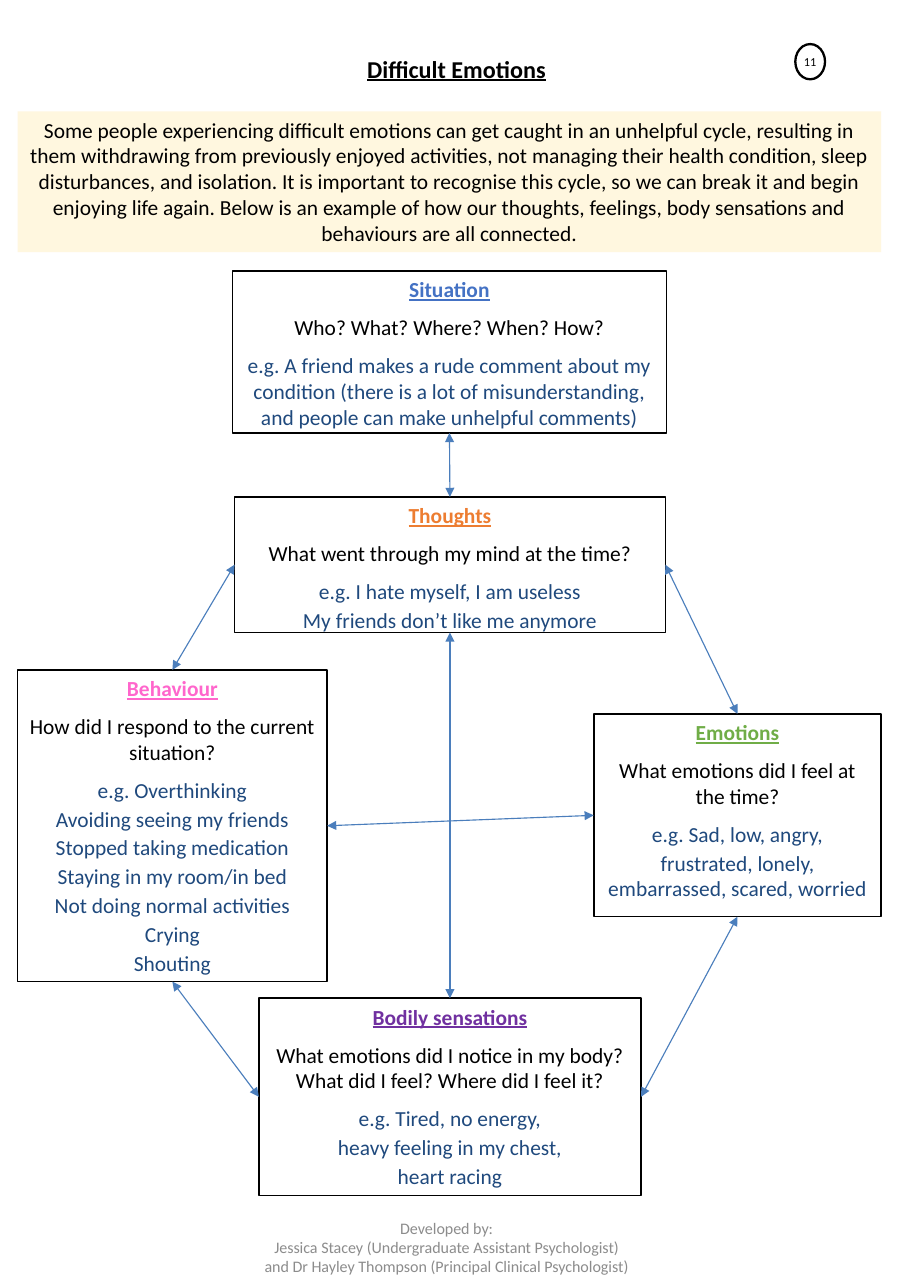
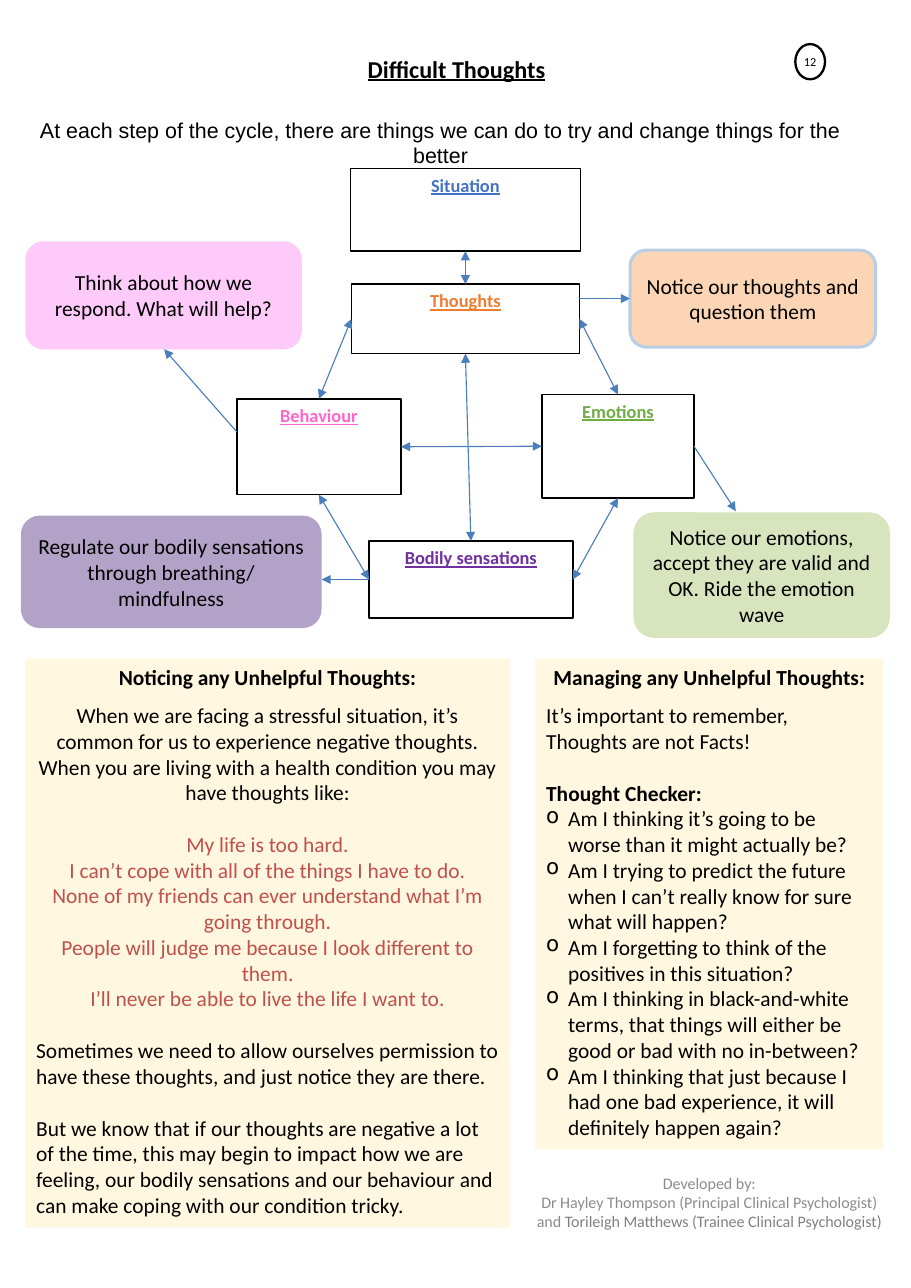
"""Two worksheets on the cycle of difficult emotions and thoughts."""
import dataclasses

import pptx
import pptx.dml.color
import pptx.enum.shapes
import pptx.enum.text
import pptx.oxml.ns
import pptx.util
from lxml import etree

Pt = pptx.util.Pt
Shape = pptx.enum.shapes.MSO_SHAPE
Align = pptx.enum.text.PP_ALIGN
Anchor = pptx.enum.text.MSO_ANCHOR
qn = pptx.oxml.ns.qn
CELL = pptx.util.Inches(0.1)
COLS, ROWS = 82.7, 116.9
TOP, LEFT, BOTTOM, RIGHT = range(4)


@dataclasses.dataclass(frozen=True)
class Theme:
    """Colours and type sizes of both slides."""
    font: str = "Calibri"
    ink: str = "000000"
    paper: str = "FFFFFF"
    cream: str = "FFF2CC"
    clear: int = 61000
    arrow: str = "4B7EBC"
    navy: str = "1F497D"
    red: str = "C0504D"
    grey: str = "8C8C8C"
    dim: str = "808080"
    title: float = 15.8
    body: float = 14
    label: float = 12
    credit: float = 10.5
    page: float = 8
    line: float = 17


T = Theme()
HUES = {"Situation": "4472C4", "Thoughts": "ED7D31", "Behaviour": "FF66CC",
        "Emotions": "70AD47", "Bodily sensations": "7030A0"}
LINKS = [("Situation", BOTTOM, "Thoughts", TOP),
         ("Thoughts", RIGHT, "Emotions", TOP),
         ("Behaviour", BOTTOM, "Bodily sensations", LEFT),
         ("Bodily sensations", RIGHT, "Emotions", BOTTOM),
         ("Behaviour", RIGHT, "Emotions", LEFT),
         ("Thoughts", BOTTOM, "Bodily sensations", TOP),
         ("Behaviour", TOP, "Thoughts", LEFT)]


@dataclasses.dataclass
class Para:
    """One paragraph and its look."""
    text: str
    color: str = T.ink
    size: float = T.body
    bold: bool = False
    under: bool = False
    after: float = 0
    before: float = 0
    left: bool = False
    bullet: bool = False
    font: str = T.font


def rgb(code):
    """Turn a hex code into a colour."""
    return pptx.dml.color.RGBColor.from_string(code)


def grid(*cells):
    """Turn grid cells into lengths."""
    return [round(cell * CELL) for cell in cells]


def write(shape, paras, anchor=Anchor.TOP, wrap=True):
    """Fill a shape with paragraphs."""
    frame = shape.text_frame
    frame.word_wrap = wrap
    frame.vertical_anchor = anchor
    for i, item in enumerate(paras):
        para = frame.add_paragraph() if i else frame.paragraphs[0]
        para.text = item.text
        para.alignment = Align.LEFT if item.left else Align.CENTER
        para.space_before, para.space_after = Pt(item.before), Pt(item.after)
        if item.bullet:
            props = para._p.get_or_add_pPr()
            props.set("marL", str(2 * CELL))
            props.set("indent", str(-2 * CELL))
            etree.SubElement(props, qn("a:buChar"), char="o")
        font = para.font
        font.name, font.size, font.bold = item.font, Pt(item.size), item.bold
        font.underline = item.under
        font.color.rgb = rgb(item.color)
    return frame


def block(slide, kind, box, fill=None, line=None, width=1):
    """Draw a flat shape in a box of grid cells."""
    shape = slide.shapes.add_shape(kind, *grid(*box))
    shape.shadow.inherit = False
    if fill:
        shape.fill.solid()
        shape.fill.fore_color.rgb = rgb(fill)
    else:
        shape.fill.background()
    if line:
        shape.line.color.rgb = rgb(line)
        shape.line.width = Pt(width)
    else:
        shape.line.fill.background()
    return shape


def label(slide, box, paras, **opts):
    """Place bare text in a box."""
    return write(slide.shapes.add_textbox(*grid(*box)), paras, **opts)


def panel(slide, box, paras):
    """Draw a pale cream panel of text."""
    shape = block(slide, Shape.RECTANGLE, box, T.cream)
    tint = shape._element.spPr.find(".//" + qn("a:srgbClr"))
    etree.SubElement(tint, qn("a:alpha"), val=str(T.clear))
    write(shape, paras)


def arrow(slide, start=(0, 0), end=(0, 0), both=False):
    """Draw an arrow between two grid points."""
    kind = pptx.enum.shapes.MSO_CONNECTOR.STRAIGHT
    link = slide.shapes.add_connector(kind, *grid(*start, *end))
    link.line.color.rgb = rgb(T.arrow)
    link.line.width = Pt(0.75)
    ends = ("headEnd", "tailEnd") if both else ("tailEnd",)
    for tip in ends:
        etree.SubElement(link.line._get_or_add_ln(), qn("a:" + tip), type="triangle")
    etree.SubElement(link._element.spPr, qn("a:effectLst"))
    return link


def cycle(slide, origin, spots, size, notes):
    """Draw the five linked boxes from an origin."""
    boxes = {}
    for name, (x, y, w, h) in spots.items():
        box = (origin[0] + x, origin[1] + y, w, h)
        boxes[name] = block(slide, Shape.RECTANGLE, box, T.paper, T.ink)
        paras = [Para(name, HUES[name], size, True, True, 8)]
        if name in notes:
            ask, *lines = notes[name]
            paras.append(Para(ask, after=8))
            paras += [Para(line, T.navy, after=2) for line in lines]
        write(boxes[name], paras)
    for first, out, last, into in LINKS:
        link = arrow(slide, both=True)
        link.begin_connect(boxes[first], out)
        link.end_connect(boxes[last], into)


def header(slide, title, page):
    """Place the title and the ringed page number."""
    label(slide, (32.2, 4.4, 18.5, 3.7),
          [Para(title, size=T.title, bold=True, under=True)], wrap=False)
    ring = block(slide, Shape.OVAL, (72.2, 4, 2.7, 3.2), line=T.ink, width=1.5)
    write(ring, [Para(page, size=T.page)], Anchor.MIDDLE, False)


def credit(slide, box, lines):
    """Place the grey credit lines."""
    paras = [Para(line, T.grey, T.credit) for line in ["Developed by:", *lines]]
    frame = label(slide, box, paras, anchor=Anchor.MIDDLE)
    frame.margin_left = frame.margin_right = round(1.2 * CELL)
    frame.margin_top = frame.margin_bottom = round(0.6 * CELL)
    return frame


def feel(slide):
    """Build the emotions worksheet."""
    header(slide, "Difficult Emotions", "11")
    panel(slide, (1.6, 10.1, 78.4, 12.8), [Para(
        "Some people experiencing difficult emotions can get caught in an unhelpful "
        "cycle, resulting in them withdrawing from previously enjoyed activities, not "
        "managing their health condition, sleep disturbances, and isolation. It is "
        "important to recognise this cycle, so we can break it and begin enjoying life "
        "again. Below is an example of how our thoughts, feelings, body sensations and "
        "behaviours are all connected.", after=8)])
    spots = {"Situation": (19.5, 0, 39.4, 14.7), "Thoughts": (19.7, 20.5, 39.1, 12.3),
             "Behaviour": (0, 36.2, 28.1, 28.3), "Emotions": (52.3, 40.2, 26.1, 18.4),
             "Bodily sensations": (21.9, 66, 34.7, 17.9)}
    notes = {
        "Situation": ["Who? What? Where? When? How?",
                      "e.g. A friend makes a rude comment about my condition (there is a "
                      "lot of misunderstanding, and people can make unhelpful comments)"],
        "Thoughts": ["What went through my mind at the time?",
                     "e.g. I hate myself, I am useless",
                     "My friends don’t like me anymore"],
        "Behaviour": ["How did I respond to the current situation?",
                      "e.g. Overthinking", "Avoiding seeing my friends",
                      "Stopped taking medication", "Staying in my room/in bed",
                      "Not doing normal activities", "Crying", "Shouting"],
        "Emotions": ["What emotions did I feel at the time?", "e.g. Sad, low, angry,",
                     "frustrated, lonely, embarrassed, scared, worried"],
        "Bodily sensations": ["What emotions did I notice in my body? What did I feel? "
                              "Where did I feel it?", "e.g. Tired, no energy,",
                              "heavy feeling in my chest,", "heart racing"]}
    cycle(slide, (1.6, 24.6), spots, T.body, notes)
    credit(slide, (20.8, 110.1, 39.5, 6.2),
           ["Jessica Stacey (Undergraduate Assistant Psychologist)",
            "and Dr Hayley Thompson (Principal Clinical Psychologist)"])


def tips(slide):
    """Draw the rounded tips and their arrows."""
    items = [
        ((57.5, 46.5, 23.3, 11.4), "D7E4BD", None, (63, 40.5), (66.8, 46.4),
         "Notice our emotions, accept they are valid and OK. Ride the emotion wave"),
        ((57.2, 22.7, 22.3, 8.8), "FCD5B5", "B9CDE5", (52.6, 27.1), (57.2, 27.1),
         "Notice our thoughts and question them"),
        ((2.3, 21.9, 25.1, 9.8), "FECAFA", None, (21.5, 39.2), (14.9, 31.7),
         "Think about how we respond. What will help?"),
        ((1.9, 46.8, 27.3, 10.2), "B3A2C7", None, (33.5, 52.6), (29.2, 52.6),
         "Regulate our bodily sensations through breathing/ mindfulness")]
    for box, fill, line, start, end, text in items:
        shape = block(slide, Shape.ROUNDED_RECTANGLE, box, fill, line, 2)
        write(shape, [Para(text)], Anchor.MIDDLE)
        arrow(slide, start, end)


def think(slide):
    """Build the thoughts worksheet."""
    header(slide, "Difficult Thoughts", "12")
    label(slide, (0, 10.1, 80, 3.4), [Para(
        "At each step of the cycle, there are things we can do to try and change "
        "things for the better", after=8, font="Arial")])
    spots = {"Situation": (10.3, 0, 20.9, 7.5), "Thoughts": (10.4, 10.5, 20.7, 6.3),
             "Behaviour": (0, 20.9, 14.9, 8.7), "Emotions": (27.7, 20.5, 13.8, 9.4),
             "Bodily sensations": (12, 33.8, 18.5, 7)}
    cycle(slide, (21.5, 15.3), spots, T.label, {})
    tips(slide)
    worries = ["My life is too hard.",
               "I can’t cope with all of the things I have to do.",
               "None of my friends can ever understand what I’m going through.",
               "People will judge me because I look different to them.",
               "I’ll never be able to live the life I want to."]
    panel(slide, (2.3, 59.8, 44, 51.6), [
        Para("Noticing any Unhelpful Thoughts:", bold=True, after=8),
        Para("When we are facing a stressful situation, it’s common for us to "
             "experience negative thoughts."),
        Para("When you are living with a health condition you may have thoughts like:",
             after=T.line),
        *[Para(worry, T.red) for worry in worries],
        Para("Sometimes we need to allow ourselves permission to have these thoughts, "
             "and just notice they are there.", before=T.line, left=True),
        Para("But we know that if our thoughts are negative a lot of the time, this may "
             "begin to impact how we are feeling, our bodily sensations and our "
             "behaviour and can make coping with our condition tricky.",
             before=T.line, left=True)])
    checks = ["Am I thinking it’s going to be worse than it might actually be?",
              "Am I trying to predict the future when I can’t really know for sure "
              "what will happen?",
              "Am I forgetting to think of the positives in this situation?",
              "Am I thinking in black-and-white terms, that things will either be good "
              "or bad with no in-between?",
              "Am I thinking that just because I had one bad experience, it will "
              "definitely happen again?"]
    panel(slide, (48.6, 59.8, 31.6, 44.5), [
        Para("Managing any Unhelpful Thoughts:", bold=True, after=8),
        Para("It’s important to remember, Thoughts are not Facts!", left=True),
        Para("Thought Checker:", bold=True, before=T.line, left=True),
        *[Para(check, left=True, bullet=True) for check in checks]])
    frame = credit(slide, (46.9, 106, 35, 6.2),
                   ["Dr Hayley Thompson (Principal Clinical Psychologist) and "])
    run = frame.paragraphs[-1].add_run()
    run.text = "Torileigh Matthews (Trainee Clinical Psychologist)"
    run.font.color.rgb = rgb(T.dim)


def main():
    """Build and save both slides."""
    deck = pptx.Presentation()
    deck.slide_width, deck.slide_height = grid(COLS, ROWS)
    for build in (feel, think):
        build(deck.slides.add_slide(deck.slide_layouts[6]))
    deck.save("out.pptx")


if __name__ == "__main__":
    main()
